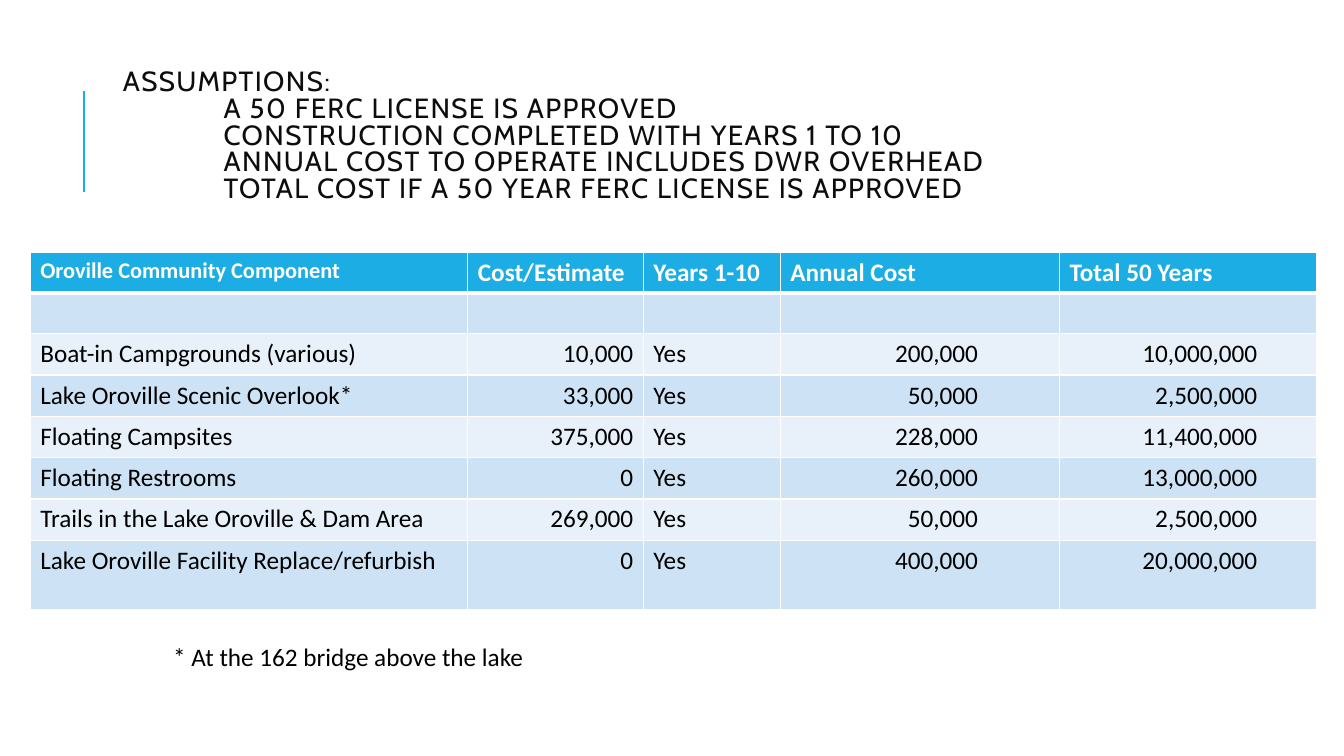
from dataclasses import dataclass

from lxml import etree
from pptx import Presentation
from pptx import util as u
from pptx.dml.color import RGBColor
from pptx.enum import shapes, text
from pptx.oxml import ns

WHITE = RGBColor(0xFF, 0xFF, 0xFF)
BLACK = RGBColor(0x00, 0x00, 0x00)
INK = RGBColor(0x0D, 0x0D, 0x0D)
ACCENT = RGBColor(0x1C, 0xAD, 0xE4)
BAND_DARK = RGBColor(0xCD, 0xE3, 0xF5)
BAND_LIGHT = RGBColor(0xE8, 0xF1, 0xFA)

LEFT, RIGHT = text.PP_ALIGN.LEFT, text.PP_ALIGN.RIGHT

TITLE_FORMAT = {"name": "Cabin", "size": u.Pt(19.8)}
BODY_FORMAT = {"name": "Calibri", "size": u.Pt(18), "bold": False}
HEADER_FORMAT = {"name": "Calibri", "size": u.Pt(18), "bold": True}
FIRST_HEADER_FORMAT = HEADER_FORMAT | {"size": u.Pt(16)}


@dataclass
class Column:
    heading: str
    width: float
    align: text.PP_ALIGN = LEFT
    right_margin: float = 0.1


@dataclass
class Component:
    name: str
    estimate: str
    annual: str
    total: str

    def values(self) -> list[str]:
        return [self.name, self.estimate, "Yes", self.annual, self.total]


TITLE_LINES = [
    "ASSUMPTIONS:",
    "A 50 FERC LICENSE IS APPROVED",
    "CONSTRUCTION COMPLETED WITH YEARS 1 TO 10",
    "ANNUAL COST TO OPERATE INCLUDES DWR OVERHEAD",
    "TOTAL COST IF A 50 YEAR FERC LICENSE IS APPROVED",
]
COLUMNS = [
    Column("Oroville Community Component", 4.34),
    Column("Cost/Estimate", 1.74, RIGHT),
    Column("Years 1-10", 1.36),
    Column("Annual Cost", 2.77, RIGHT, 0.81),
    Column("Total 50 Years", 2.55, RIGHT, 0.59),
]
COMPONENTS = [
    Component("Boat-in Campgrounds (various)", "10,000", "200,000", "10,000,000"),
    Component("Lake Oroville Scenic Overlook*", "33,000", "50,000", "2,500,000"),
    Component("Floating Campsites", "375,000", "228,000", "11,400,000"),
    Component("Floating Restrooms", "0", "260,000", "13,000,000"),
    Component("Trails in the Lake Oroville & Dam Area", "269,000", "50,000", "2,500,000"),
    Component("Lake Oroville Facility Replace/refurbish", "0", "400,000", "20,000,000"),
]
ROW_HEIGHTS = [0.41, 0.4] + [0.41] * 5 + [0.69]


def apply_format(font, values: dict, color: RGBColor) -> None:
    for name, value in values.items():
        setattr(font, name, value)
    font.color.rgb = color


def add_text_frame(slide, left: float, top: float, width: float, height: float):
    box = slide.shapes.add_textbox(*map(u.Inches, (left, top, width, height)))
    box.text_frame.word_wrap = True
    return box.text_frame


def add_accent_line(slide) -> None:
    line = slide.shapes.add_connector(
        shapes.MSO_CONNECTOR.STRAIGHT, *map(u.Inches, (0.83, 1.9, 0.83, 0.9)))
    line.line.color.rgb = ACCENT
    line.line.width = u.Pt(1.5)
    etree.SubElement(line._element.spPr, ns.qn("a:effectLst"))


def add_title(slide) -> None:
    frame = add_text_frame(slide, 1.12, 0.86, 11.72, 1.64)
    frame.vertical_anchor = text.MSO_ANCHOR.MIDDLE
    frame.margin_bottom = u.Inches(0.69)
    for index, line in enumerate(TITLE_LINES):
        paragraph = frame.add_paragraph() if index else frame.paragraphs[0]
        paragraph.line_spacing = 0.8
        if index:
            paragraph._p.get_or_add_pPr().set("marL", str(u.Inches(1)))
        run = paragraph.add_run()
        run.text = line
        apply_format(run.font, TITLE_FORMAT, INK)
        run.font._element.set("spc", "100")


def set_borders(cell, widths: dict[str, float]) -> None:
    properties = cell._tc.get_or_add_tcPr()
    for position, (side, width) in enumerate(widths.items()):
        border = etree.Element(ns.qn(f"a:{side}"), w=str(u.Pt(width)))
        fill = etree.SubElement(border, ns.qn("a:solidFill"))
        etree.SubElement(fill, ns.qn("a:srgbClr"), val=str(WHITE))
        properties.insert(position, border)


def fill_cell(cell, value: str, row: int, column: Column) -> None:
    header = row == 0
    cell.fill.solid()
    cell.fill.fore_color.rgb = ACCENT if header else (BAND_LIGHT, BAND_DARK)[row % 2]
    set_borders(cell, {"lnL": 1, "lnR": 1,
                       "lnT": 3 if row == 1 else 1, "lnB": 3 if header else 1})
    paragraph = cell.text_frame.paragraphs[0]
    if header:
        first = column is COLUMNS[0]
        values, color = FIRST_HEADER_FORMAT if first else HEADER_FORMAT, WHITE
    else:
        values, color = BODY_FORMAT, BLACK
        paragraph.alignment = column.align
        cell.margin_right = u.Inches(column.right_margin)
    paragraph.text = value
    apply_format(paragraph.font, values, color)
    for run in paragraph.runs:
        apply_format(run.font, values, color)


def add_cost_table(slide) -> None:
    rows = [[column.heading for column in COLUMNS], [""] * len(COLUMNS)]
    rows += [component.values() for component in COMPONENTS]
    width = sum(column.width for column in COLUMNS)
    table = slide.shapes.add_table(
        len(rows), len(COLUMNS),
        *map(u.Inches, (0.3, 2.5, width, sum(ROW_HEIGHTS)))).table
    for table_column, column in zip(table.columns, COLUMNS):
        table_column.width = u.Inches(column.width)
    for row, (values, height) in enumerate(zip(rows, ROW_HEIGHTS)):
        table.rows[row].height = u.Inches(height)
        for index, (value, column) in enumerate(zip(values, COLUMNS)):
            fill_cell(table.cell(row, index), value, row, column)


def add_footnote(slide) -> None:
    frame = add_text_frame(slide, 1.62, 6.31, 5.16, 0.4)
    run = frame.paragraphs[0].add_run()
    run.text = "* At the 162 bridge above the lake"
    apply_format(run.font, BODY_FORMAT, BLACK)


def main() -> None:
    presentation = Presentation()
    presentation.slide_width = u.Inches(13.33)
    presentation.slide_height = u.Inches(7.5)
    slide = presentation.slides.add_slide(presentation.slide_layouts[6])

    # Heading with its accent line
    add_accent_line(slide)
    add_title(slide)

    # Costs and footnote
    add_cost_table(slide)
    add_footnote(slide)

    presentation.save("out.pptx")


if __name__ == "__main__":
    main()
